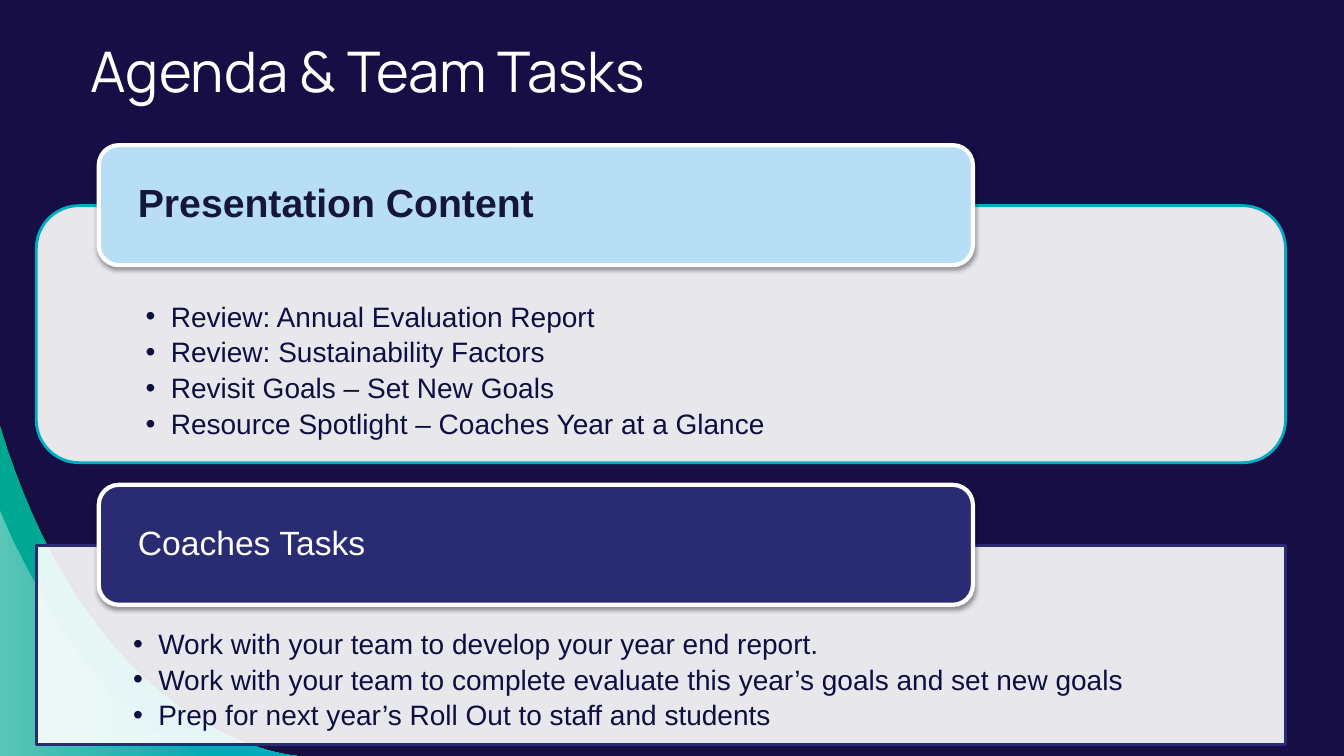
from lxml import etree
from pptx import Presentation
from pptx.dml.color import RGBColor
from pptx.enum import shapes, text
from pptx.oxml import parse_xml
from pptx.oxml.ns import nsdecls, qn
from pptx.util import Inches, Pt

NIGHT = RGBColor(0x16, 0x0E, 0x44)
SHADE = RGBColor(0x12, 0x10, 0x2F)
CYAN = RGBColor(0x00, 0xAC, 0xC2)
GREEN = RGBColor(0x00, 0xA7, 0x91)
WHITE = RGBColor(0xFF, 0xFF, 0xFF)
SKY = RGBColor(0xB7, 0xDE, 0xF4)
INDIGO = RGBColor(0x29, 0x2C, 0x73)
HEADING = RGBColor(0x15, 0x16, 0x3A)
INK = RGBColor(0x0D, 0x0F, 0x41)

ROUND = shapes.MSO_SHAPE.ROUNDED_RECTANGLE
RECT = shapes.MSO_SHAPE.RECTANGLE

SECTIONS = [
    dict(box=(0.36, 2.04, 12.39, 2.55), outline=ROUND, accent=CYAN, tab_fill=SKY,
         heading="Presentation Content",
         heading_font=dict(size=Pt(28), bold=True), heading_color=HEADING,
         items=["Review: Annual Evaluation Report",
                "Review: Sustainability Factors",
                "Revisit Goals – Set New Goals",
                "Resource Spotlight – Coaches Year at a Glance"]),
    dict(box=(0.36, 5.41, 12.39, 1.98), outline=RECT, accent=INDIGO, tab_fill=INDIGO,
         heading="Coaches Tasks",
         heading_font=dict(size=Pt(24), bold=False), heading_color=WHITE,
         items=["Work with your team to develop your year end report.",
                "Work with your team to complete evaluate this year’s goals and set new goals",
                "Prep for next year’s Roll Out to staff and students"]),
]


def set_attrs(obj, **values):
    for name, value in values.items():
        setattr(obj, name, value)


def set_alpha(color_el, percent):
    etree.SubElement(color_el, qn("a:alpha"), val=str(percent * 1000))


def solid(sp, color, alpha=100):
    sp.fill.solid()
    sp.fill.fore_color.rgb = color
    if alpha < 100:
        set_alpha(sp._element.spPr.find(".//" + qn("a:srgbClr")), alpha)


def gradient(sp, stops):
    """Fill from left to right with two (color, opacity) stops."""
    sp.fill.gradient()
    sp.fill.gradient_angle = 0
    for stop, (color, _) in zip(sp.fill.gradient_stops, stops):
        stop.color.rgb = color
    colors = sp._element.spPr.findall(".//" + qn("a:gs") + "/" + qn("a:srgbClr"))
    for color_el, (_, alpha) in zip(colors, stops):
        set_alpha(color_el, alpha)


def outline(sp, color, width):
    sp.line.color.rgb = color
    sp.line.width = Pt(width)


def drop_shadow(sp):
    sp._element.spPr.append(parse_xml(
        f'<a:effectLst {nsdecls("a")}><a:outerShdw blurRad="{Pt(3.1)}" dist="{Pt(1.6)}" '
        'dir="5400000" rotWithShape="0"><a:srgbClr val="000000"><a:alpha val="38000"/>'
        '</a:srgbClr></a:outerShdw></a:effectLst>'))


def set_frame(tf, anchor, margins):
    left, top, right, bottom = map(Inches, margins)
    set_attrs(tf, word_wrap=True, vertical_anchor=anchor, margin_left=left,
              margin_top=top, margin_right=right, margin_bottom=bottom)


def write(p, words, color, **font):
    p.alignment = text.PP_ALIGN.LEFT
    r = p.add_run()
    r.text = words
    set_attrs(r.font, **font)
    r.font.color.rgb = color


def add_bullet(p):
    pPr = p._p.get_or_add_pPr()
    pPr.set("marL", str(Inches(0.25)))
    pPr.set("indent", str(-Inches(0.25)))
    etree.SubElement(pPr, qn("a:buFont"), typeface="Arial")
    etree.SubElement(pPr, qn("a:buChar"), char="•")


def bezier(points, steps=40):
    """Points along a cubic curve, in slide units."""
    for i in range(steps + 1):
        t = i / steps
        weights = ((1 - t) ** 3, 3 * t * (1 - t) ** 2, 3 * t * t * (1 - t), t ** 3)
        yield tuple(Inches(sum(w * pt[axis] for w, pt in zip(weights, points)))
                    for axis in (0, 1))


def add_swoosh(slide, bottom, *curve):
    """Corner area between the left edge, the bottom edge and a curve."""
    start, *rest = bezier(curve)
    fb = slide.shapes.build_freeform(*start)
    fb.add_line_segments(rest + [(0, Inches(bottom))], close=True)
    sp = fb.convert_to_shape()
    sp.line.fill.background()
    sp.shadow.inherit = False
    return sp


def add_corner(slide, bottom):
    shade = add_swoosh(slide, bottom, (0, 4.13), (0.98, 7.39), (3.03, bottom), (3.03, bottom))
    solid(shade, SHADE, 54)
    band = add_swoosh(slide, bottom, (0, 4.22), (0.95, 7.39), (2.95, bottom), (2.95, bottom))
    gradient(band, [(GREEN, 100), (CYAN, 100)])
    glow = add_swoosh(slide, bottom, (0, 5.06), (0, 5.06), (0.91, 7.35), (2.16, bottom))
    gradient(glow, [(WHITE, 36), (WHITE, 0)])


def add_title(slide, box, words):
    tf = slide.shapes.add_textbox(*map(Inches, box)).text_frame
    set_frame(tf, text.MSO_ANCHOR.TOP, (0.1, 0.1, 0.1, 0.1))
    write(tf.paragraphs[0], words, WHITE, name="Manrope", size=Pt(40))


def add_section(slide, box, outline_shape, section):
    """Panel with a bullet list and a heading tab over its top edge."""
    left, top, _, _ = box
    panel = slide.shapes.add_shape(outline_shape, *map(Inches, box))
    panel.shadow.inherit = False
    solid(panel, WHITE, 90)
    outline(panel, section["accent"], 2)
    tf = panel.text_frame
    set_frame(tf, text.MSO_ANCHOR.TOP, (0.96, 0.84, 0.96, 0.16))
    for i, item in enumerate(section["items"]):
        p = tf.add_paragraph() if i else tf.paragraphs[0]
        set_attrs(p, line_spacing=0.9, space_after=Pt(4))
        add_bullet(p)
        write(p, item, INK, name="Arial", size=Pt(20))

    tab_box = (left + 0.62, top - 0.6, 8.67, 1.19)
    tab = slide.shapes.add_shape(ROUND, *map(Inches, tab_box))
    solid(tab, section["tab_fill"])
    outline(tab, WHITE, 3)
    drop_shadow(tab)
    set_frame(tab.text_frame, text.MSO_ANCHOR.MIDDLE, (0.33, 0, 0.33, 0))
    p = tab.text_frame.paragraphs[0]
    p.line_spacing = 0.9
    write(p, section["heading"], section["heading_color"], name="Arial",
          **section["heading_font"])


def main():
    prs = Presentation()
    set_attrs(prs, slide_width=Inches(13.33), slide_height=Inches(7.5))
    slide = prs.slides.add_slide(prs.slide_layouts[6])
    slide.background.fill.solid()
    slide.background.fill.fore_color.rgb = NIGHT
    add_corner(slide, 7.5)
    for section in SECTIONS:
        add_section(slide, section["box"], section["outline"], section)
    add_title(slide, (0.8, 0.26, 10.26, 0.92), "Agenda & Team Tasks")
    prs.save("out.pptx")


if __name__ == "__main__":
    main()
